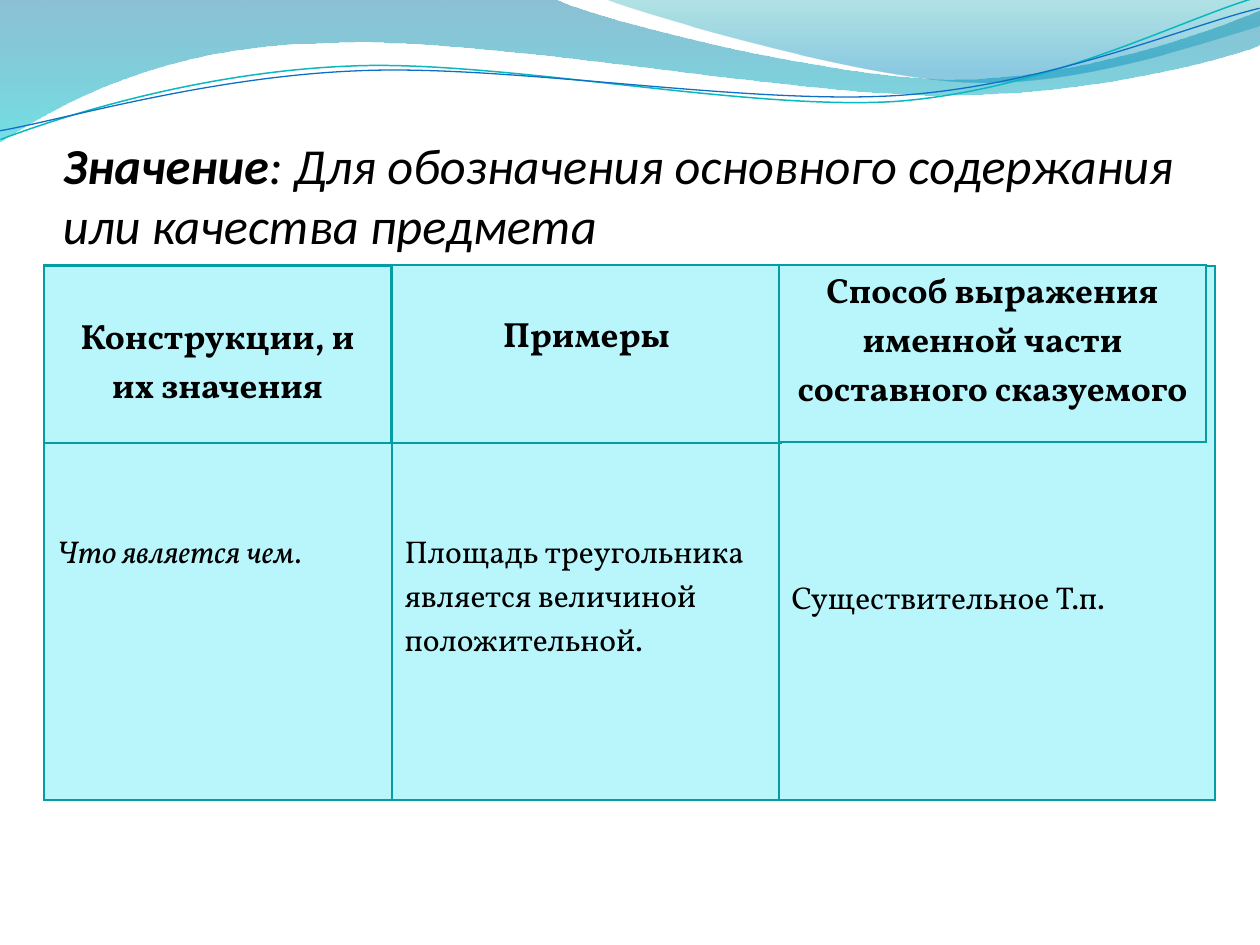
from dataclasses import dataclass

import pptx
import pptx.dml.color
import pptx.enum.text
import pptx.oxml
import pptx.oxml.ns
import pptx.util

PX = 914400 / 126


@dataclass(frozen=True)
class Theme:
    text: str = "000000"
    cell: str = "B9F6FC"
    border: str = "069CA3"
    title_font: str = "Calibri"
    table_font: str = "Vollkorn"
    title_size: float = 28.8
    head_size: float = 20
    body_size: float = 18
    border_width: float = 0.75


THEME = Theme()
STRAND_TURN = 357.3

# Each step is a line end (x, y) or a cubic curve (x1, y1, x2, y2, x, y).
# Bands: outline and gradient stops (position, colour, opacity %).
BANDS = [
    ([(0, 0), (554, -1), (600, 21, 837, 79, 955, 79),
      (1075, 79, 1207, 33, 1260, 11), (1261, 45),
      (1239, 55, 1096, 96, 940, 95), (784, 95, 481, 35, 324, 43),
      (163, 45, 58, 105, -1, 142)],
     [(0, "0074A1", 45), (1, "00C6CF", 55)]),
    ([(604, -1), (641, 14, 859, 78, 969, 82),
      (1079, 87, 1211, 40, 1260, 26), (1260, 0)],
     [(0, "00A1A9", 30), (0.8, "008BBF", 45)]),
]
# Strands, before they are turned: outline, colour and width in points.
STRANDS = [
    ([(-2, 110), (59, 90, 199, 52, 350, 53), (499, 53, 745, 117, 896, 114),
      (1049, 109, 1184, 45, 1260, 27)], "0AB8BF", 0.85),
    ([(-2, 101), (57, 94, 207, 57, 357, 58), (509, 58, 750, 112, 902, 108),
      (1052, 104, 1188, 52, 1262, 38)], "0F6FC6", 0.75),
]

HEAD = dict(size=THEME.head_size, bold=True)
BODY = dict(size=THEME.body_size)
# Cells: box (left, top, width, height), space above the text, text, font.
CELLS = [
    ((44, 265, 348, 535), 269, "Что является чем.", dict(BODY, italic=True)),
    ((392, 265, 387, 535), 269,
     "Площадь треугольника является величиной положительной.", BODY),
    ((779, 266, 436, 534), 314, "Существительное Т.п.", BODY),
    ((44, 266, 347, 177), 50, "Конструкции, и их значения", HEAD),
    ((392, 265, 389, 178), 49, "Примеры", HEAD),
    ((779, 265, 427, 177), 5,
     "Способ выражения именной части составного сказуемого", HEAD),
]


def emu(*lengths):
    return [round(v * PX) for v in lengths]


def rgb(value):
    return pptx.dml.color.RGBColor.from_string(value)


def add_run(p, text, name, size, **style):
    r = p.add_run()
    r.text = text
    r.font.color.rgb = rgb(THEME.text)
    for key, value in dict(style, name=name, size=pptx.util.Pt(size)).items():
        setattr(r.font, key, value)


def add_outline(shapes, x, y, steps, close):
    """Build the outline through all points, then bend its curved steps."""
    points = [emu(x + step[i], y + step[i + 1])
              for step in steps for i in range(0, len(step), 2)]
    builder = shapes.build_freeform(*points[0], scale=1.0)
    builder.add_line_segments(points[1:], close=close)
    sp = builder.convert_to_shape()
    sp.shadow.inherit = False
    lines = iter(sp.element.findall(".//" + pptx.oxml.ns.qn("a:lnTo")))
    for step in steps[1:]:
        first = next(lines)
        if len(step) == 6:
            first.tag = pptx.oxml.ns.qn("a:cubicBezTo")
            for line in (next(lines), next(lines)):
                first.append(line[0])
                line.getparent().remove(line)
    return sp


def add_waves(s, x, y):
    for steps, stops in BANDS:
        sp = add_outline(s.shapes, x, y, steps, True)
        sp.line.fill.background()
        sp.fill.gradient()
        sp.fill.gradient_angle = 270
        for stop, (position, color, opacity) in zip(sp.fill.gradient_stops, stops):
            stop.position = position
            stop.color.rgb = rgb(color)
        clrs = sp.element.spPr.findall(".//" + pptx.oxml.ns.qn("a:srgbClr"))
        for clr, (position, color, opacity) in zip(clrs, stops):
            clr.append(pptx.oxml.parse_xml(
                f'<a:alpha {pptx.oxml.ns.nsdecls("a")} val="{opacity * 1000}"/>'))
    group = s.shapes.add_group_shape()
    for steps, color, width in STRANDS:
        sp = add_outline(group.shapes, x, y, steps, False)
        sp.rotation = STRAND_TURN
        sp.fill.background()
        sp.line.color.rgb = rgb(color)
        sp.line.width = pptx.util.Pt(width)


def add_title(s, box):
    tf = s.shapes.add_textbox(*emu(*box)).text_frame
    tf.word_wrap = True
    tf.vertical_anchor = pptx.enum.text.MSO_ANCHOR.BOTTOM
    tf.margin_left = tf.margin_right = tf.margin_bottom = 0
    p = tf.paragraphs[0]
    for text, bold in [("Значение", True),
                       (": Для обозначения основного содержания или качества предмета", False)]:
        add_run(p, text, THEME.title_font, THEME.title_size, bold=bold, italic=True)


def add_borders(cell):
    width = pptx.util.Pt(THEME.border_width)
    for i, side in enumerate("LRTB"):
        cell._tc.get_or_add_tcPr().insert(i, pptx.oxml.parse_xml(
            f'<a:ln{side} {pptx.oxml.ns.nsdecls("a")} w="{width}"><a:solidFill>'
            f'<a:srgbClr val="{THEME.border}"/></a:solidFill></a:ln{side}>'))


def add_cell_table(s, box, space_above, text, style):
    """Place a one-cell table; header text is centred."""
    table = s.shapes.add_table(1, 1, *emu(*box)).table
    table.first_row = table.horz_banding = False
    cell = table.cell(0, 0)
    cell.fill.solid()
    cell.fill.fore_color.rgb = rgb(THEME.cell)
    add_borders(cell)
    cell.margin_top, = emu(space_above)
    p = cell.text_frame.paragraphs[0]
    align = pptx.enum.text.PP_ALIGN
    p.alignment = align.CENTER if style is HEAD else align.LEFT
    add_run(p, text, THEME.table_font, **style)


def main():
    prs = pptx.Presentation()
    prs.slide_width, prs.slide_height = emu(1260, 945)
    s = prs.slides.add_slide(prs.slide_layouts[6])
    add_waves(s, 0, 0)
    add_title(s, (63, 116, 1134, 139))
    for cell in CELLS:
        add_cell_table(s, *cell)
    prs.save("out.pptx")


if __name__ == "__main__":
    main()
